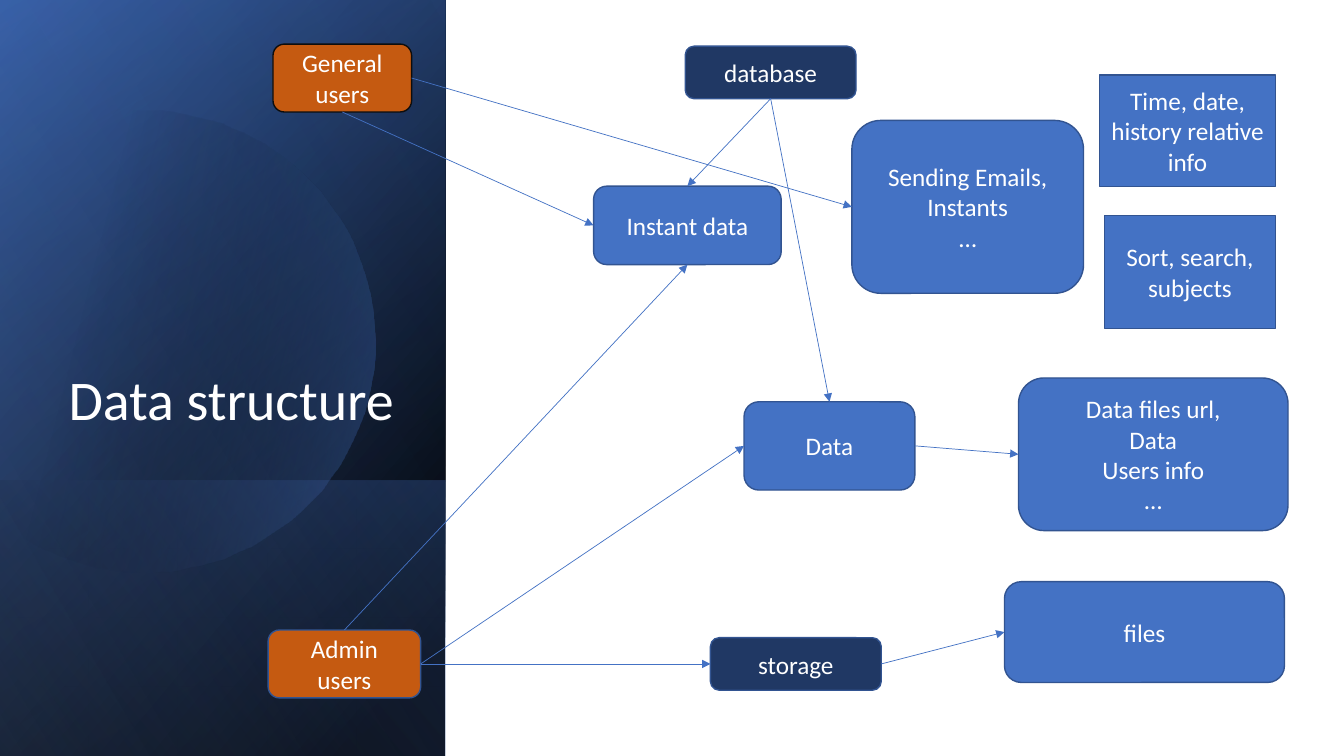
from lxml.etree import SubElement
from pptx import Presentation
from pptx.dml.color import RGBColor
from pptx.enum.shapes import MSO_CONNECTOR, MSO_SHAPE
from pptx.enum.text import MSO_ANCHOR, PP_ALIGN
from pptx.oxml.ns import qn
from pptx.util import Pt

WHITE = RGBColor(0xFF, 0xFF, 0xFF)
BLACK = RGBColor(0x00, 0x00, 0x00)
CHARCOAL = RGBColor(0x0D, 0x0D, 0x0D)
BLUE = RGBColor(0x44, 0x72, 0xC4)
DEEP_BLUE = RGBColor(0x2F, 0x55, 0x97)
OUTLINE_BLUE = RGBColor(0x32, 0x54, 0x91)
PALE_BLUE = RGBColor(0x8F, 0xAA, 0xDC)
NAVY = RGBColor(0x20, 0x38, 0x64)
ORANGE = RGBColor(0xC5, 0x5A, 0x11)

TOP, LEFT, BOTTOM, RIGHT = range(4)
PAGE_WIDTH, PAGE_HEIGHT, SIDE_WIDTH = 960, 540, 318


def curve(start, first, second, end, steps=24):
    for step in range(1, steps + 1):
        t = step / steps
        weights = ((1 - t) ** 3, 3 * t * (1 - t) ** 2, 3 * t * t * (1 - t), t ** 3)
        yield tuple(
            sum(weight * value for weight, value in zip(weights, values))
            for values in zip(start, first, second, end)
        )


class DiagramPage:
    font_name = "Calibri"

    def __init__(self, page):
        self.page = page
        self.shapes = page.shapes

    def set_text(self, box, text, size, align, anchor):
        frame = box.text_frame
        frame.word_wrap = True
        frame.vertical_anchor = anchor
        frame.text = text
        for paragraph in frame.paragraphs:
            paragraph.alignment = align
            paragraph.font.name = self.font_name
            paragraph.font.size = Pt(size)
            paragraph.font.color.rgb = WHITE

    def shade(self, shape, stops, angle):
        shape.shadow.inherit = False
        shape.line.fill.background()
        shape.fill.gradient()
        shape.fill.gradient_angle = 360 - angle
        for stop, (position, color, _) in zip(shape.fill.gradient_stops, stops):
            stop.position = position / 100
            stop.color.rgb = color
        colors = shape._element.spPr.iter(qn("a:srgbClr"))
        for color, (_, _, opacity) in zip(list(colors), stops):
            SubElement(color, qn("a:alpha")).set("val", str(opacity * 1000))

    def panel(self, depth, stops, angle):
        left = (SIDE_WIDTH - depth) / 2
        top = PAGE_HEIGHT - (depth + SIDE_WIDTH) / 2
        shape = self.shapes.add_shape(
            MSO_SHAPE.RECTANGLE, Pt(left), Pt(top), Pt(depth), Pt(SIDE_WIDTH)
        )
        shape.rotation = 90
        shape._element.spPr.xfrm.set("flipH", "1")
        self.shade(shape, stops, angle)

    def disc(self, start, segments, stops, angle):
        points = [start]
        for segment in segments:
            if len(segment) == 1:
                points.extend(segment)
            else:
                points.extend(curve(points[-1], *segment))
        builder = self.shapes.build_freeform(*start, scale=Pt(1))
        builder.add_line_segments(points[1:], close=True)
        self.shade(builder.convert_to_shape(), stops, angle)

    def title(self, text, left, top, width, height):
        box = self.shapes.add_textbox(Pt(left), Pt(top), Pt(width), Pt(height))
        self.set_text(box, text, 40, PP_ALIGN.RIGHT, MSO_ANCHOR.BOTTOM)
        box.text_frame.paragraphs[0].line_spacing = 0.9

    def node(self, text, left, top, width, height, fill=BLUE,
             outline=OUTLINE_BLUE, kind=MSO_SHAPE.ROUNDED_RECTANGLE):
        box = self.shapes.add_shape(kind, Pt(left), Pt(top), Pt(width), Pt(height))
        box.shadow.inherit = False
        box.fill.solid()
        box.fill.fore_color.rgb = fill
        box.line.color.rgb = outline
        box.line.width = Pt(1)
        self.set_text(box, text, 18, PP_ALIGN.CENTER, MSO_ANCHOR.MIDDLE)
        return box

    def arrow(self, source, source_side, target, target_side):
        link = self.shapes.add_connector(MSO_CONNECTOR.STRAIGHT, 0, 0, 0, 0)
        link.begin_connect(source, source_side)
        link.end_connect(target, target_side)
        link.line.color.rgb = BLUE
        link.line.width = Pt(0.5)
        properties = link._element.spPr
        SubElement(properties.find(qn("a:ln")), qn("a:tailEnd")).set("type", "triangle")
        SubElement(properties, qn("a:effectLst"))


def main():
    deck = Presentation()
    deck.slide_width, deck.slide_height = Pt(PAGE_WIDTH), Pt(PAGE_HEIGHT)
    diagram = DiagramPage(deck.slides.add_slide(deck.slide_layouts[6]))

    diagram.panel(PAGE_HEIGHT, [(8, BLACK, 100), (100, DEEP_BLUE, 100)], 50)
    diagram.panel(PAGE_HEIGHT, [(0, BLACK, 0), (99, BLUE, 46)], 30)
    diagram.panel(197, [(2, BLUE, 29), (100, BLACK, 30)], 130)
    diagram.disc((107, 79), [
        [(177, 81), (241, 127), (261, 198)],
        [(287, 286), (236, 377), (149, 402)],
        [(94, 418), (38, 404), (-2, 370)],
        [(-11, 362)],
        [(-11, 126)],
        [(0, 116)],
        [(17, 102), (36, 92), (58, 86)],
        [(74, 81), (91, 79), (107, 79)],
    ], [(29, BLACK, 0), (100, BLUE, 43)], 14)
    diagram.panel(PAGE_HEIGHT, [(0, BLACK, 0), (99, PALE_BLUE, 11)], 120)
    diagram.title("Data structure", 36.5, 46, 252, 266.5)

    general = diagram.node("General users", 195, 31.5, 99, 48.5, ORANGE, CHARCOAL)
    admin = diagram.node("Admin users", 191.5, 450, 109, 48.5, ORANGE)
    database = diagram.node("database", 489.5, 33, 122, 37.5, NAVY)
    files = diagram.node("files", 717.5, 415.5, 200, 72)
    storage = diagram.node("storage", 507.5, 455.5, 122, 37.5, NAVY)
    data = diagram.node("Data", 531.5, 287, 122, 63)
    instant = diagram.node("Instant data", 424, 133, 134, 56)
    sending = diagram.node("Sending Emails,\nInstants\n…", 608.5, 86, 165.5, 123.5)
    details = diagram.node(
        "Data files url,\nData\nUsers info\n…", 727.5, 270, 192.5, 109
    )

    for link in [
        (general, BOTTOM, instant, LEFT),
        (database, BOTTOM, instant, TOP),
        (admin, RIGHT, data, LEFT),
        (admin, TOP, instant, BOTTOM),
        (general, RIGHT, sending, LEFT),
        (admin, RIGHT, storage, LEFT),
        (storage, RIGHT, files, LEFT),
        (data, RIGHT, details, LEFT),
        (database, BOTTOM, data, TOP),
    ]:
        diagram.arrow(*link)

    diagram.node("Time, date, history relative info", 785.5, 53.5, 125.5, 80,
                 kind=MSO_SHAPE.RECTANGLE)
    diagram.node("Sort, search, subjects", 789, 154, 122, 80.5,
                 kind=MSO_SHAPE.RECTANGLE)
    deck.save("out.pptx")


if __name__ == "__main__":
    main()
